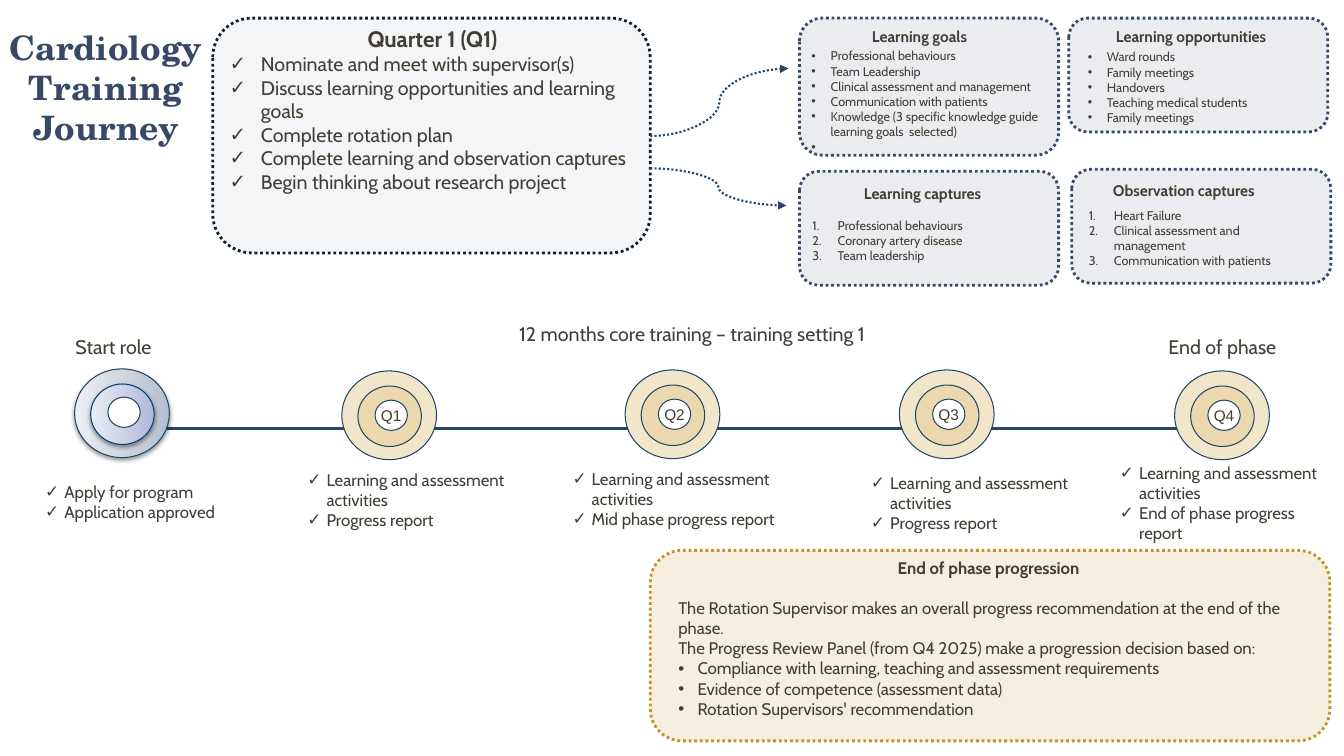
from lxml import etree
from pptx import Presentation
from pptx import util as u
from pptx.dml.color import RGBColor
from pptx.enum import dml, shapes, text
from pptx.oxml import ns

PX = 9144
INK = RGBColor(0x43, 0x3E, 0x35)
NAVY = RGBColor(0x38, 0x49, 0x65)
TITLE = RGBColor(0x38, 0x49, 0x67)
NIGHT = RGBColor(0x12, 0x20, 0x2C)
RAIL = RGBColor(0x27, 0x46, 0x63)
RIM = RGBColor(0x20, 0x46, 0x66)
BLUE = RGBColor(0x00, 0x3C, 0x76)
GOLD = RGBColor(0xC5, 0x93, 0x2B)
SAND = RGBColor(0xF2, 0xE6, 0xCA)
AMBER = RGBColor(0xD3, 0xA4, 0x40)
WHITE = RGBColor(0xFF, 0xFF, 0xFF)
MIST = RGBColor(0xEC, 0xEE, 0xF2)
STEEL = RGBColor(0xB6, 0xBF, 0xCE)
PALE = RGBColor(0xEA, 0xEC, 0xF5)
LILAC = RGBColor(0xAF, 0xB8, 0xD9)
OVAL = shapes.MSO_SHAPE.OVAL
ROUND = shapes.MSO_SHAPE.ROUNDED_RECTANGLE

deck = Presentation()
deck.slide_width, deck.slide_height = 1333 * PX, 750 * PX
slide = deck.slides.add_slide(deck.slide_layouts[6])


def draw(kind, at, fill, line, alpha=100):
    form = slide.shapes.add_shape(kind, *[n * PX for n in at])
    form.shadow.inherit = False
    form.fill.solid()
    form.fill.fore_color.rgb = fill
    if alpha < 100:
        tint = form._element.spPr.find(ns.qn("a:solidFill"))[0]
        etree.SubElement(tint, ns.qn("a:alpha"), val=str(alpha * 1000))
    form.line.color.rgb = line
    form.line.width = u.Pt(0.75)
    if kind == ROUND:
        form.line.width = u.Pt(2)
        form.line.dash_style = dml.MSO_LINE.ROUND_DOT
    return form


def write(at, lines, size, mark=None, dent=19, start=0, bold=False, face="Cabin", wrap=True):
    box = slide.shapes.add_textbox(*[n * PX for n in at])
    frame = box.text_frame
    frame.word_wrap = wrap
    frame.auto_size = text.MSO_AUTO_SIZE.SHAPE_TO_FIT_TEXT
    frame.text = "\n".join(lines)
    for i, para in enumerate(frame.paragraphs):
        if mark and i >= start:
            props = para._p.get_or_add_pPr()
            props.set("marL", str(dent * PX))
            props.set("indent", str(-dent * PX))
            if mark == "1.":
                etree.SubElement(props, ns.qn("a:buAutoNum"), type="arabicPeriod")
            else:
                etree.SubElement(props, ns.qn("a:buFont"), typeface="Arial")
                etree.SubElement(props, ns.qn("a:buChar"), char=mark)
        for run in para.runs:
            run.font.size = u.Pt(size)
            run.font.name = face
            run.font.bold = bold
            run.font.color.rgb = INK
    return frame


title = write((2, 41, 206, 91), ["Cardiology Training Journey"], 24,
              bold=True, face="TeX Gyre Schola")
title.auto_size = text.MSO_AUTO_SIZE.NONE
title.vertical_anchor = text.MSO_ANCHOR.MIDDLE
title.margin_left = title.margin_right = 5 * PX
title.paragraphs[0].alignment = text.PP_ALIGN.CENTER
title.paragraphs[0].runs[0].font.color.rgb = TITLE

rail = slide.shapes.add_connector(
    shapes.MSO_CONNECTOR.STRAIGHT, 90 * PX, 425 * PX, 1234 * PX, 425 * PX)
rail.line.color.rgb = RAIL
rail.line.width = u.Pt(2.25)
etree.SubElement(rail._element.spPr, ns.qn("a:effectLst"))

for at, light, dark, edge in [
    ((74, 366, 94, 88), MIST, STEEL, RIM),
    ((90, 381, 63, 60), PALE, LILAC, BLUE),
]:
    ring = draw(OVAL, at, light, edge)
    ring.fill.gradient()
    ring.fill.gradient_angle = 0
    for stop, shade in zip(ring.fill.gradient_stops, (light, dark)):
        stop.color.rgb = shade
    glow = etree.SubElement(
        ring._element.spPr.find(ns.qn("a:effectLst")), ns.qn("a:outerShdw"),
        blurRad=str(u.Pt(3.1)), dist=str(u.Pt(1.6)), dir="5400000", rotWithShape="0")
    black = etree.SubElement(glow, ns.qn("a:srgbClr"), val="000000")
    etree.SubElement(black, ns.qn("a:alpha"), val="38000")
draw(OVAL, (107, 394, 32, 30), WHITE, RIM)

for name, x, y in [("Q1", 386, 412), ("Q2", 667, 411), ("Q3", 939, 411), ("Q4", 1212, 412)]:
    draw(OVAL, (x - 47, y - 44, 94, 88), SAND, RIM)
    draw(OVAL, (x - 31, y - 29, 63, 60), AMBER, RIM, 20)
    draw(OVAL, (x - 14, y - 15, 32, 30), WHITE, RIM)
    write((x - 18, y - 14, 83, 29), [name], 11, face="Arial")

task = "Learning and assessment activities"
for at, lines in [
    ((35, 473, 216, 50), ["Apply for program", "Application approved"]),
    ((295, 461, 219, 71), [task, "Progress report"]),
    ((558, 460, 262, 71), [task, "Mid phase progress report"]),
    ((854, 464, 219, 71), [task, "Progress report"]),
    ((1101, 454, 232, 91), [task, "End of phase progress report"]),
]:
    write(at, lines, 12, "✓")

for at, words in [
    ((65, 327, 97, 34), "Start role"),
    ((505, 314, 376, 34), "12 months core training – training setting 1"),
    ((1149, 327, 135, 34), "End of phase"),
]:
    write(at, [words], 14, wrap=False)

cards = [
    ((793, 18, 257, 136), (855, 22, 122, 29), "Learning goals", (795, 43, 268, 116), "•", 19,
     ["Professional behaviours", "Team Leadership", "Clinical assessment and management",
      "Communication with patients",
      "Knowledge (3 specific knowledge guide learning goals  selected)", " "]),
    ((1060, 18, 257, 113), (1097, 22, 183, 29), "Learning opportunities",
     (1069, 44, 228, 86), "•", 19,
     ["Ward rounds", "Family meetings", "Handovers", "Teaching medical students",
      "Family meetings"]),
    ((793, 170, 257, 113), (847, 178, 149, 29), "Learning captures",
     (796, 211, 228, 56), "1.", 25,
     ["Professional behaviours", "Coronary artery disease", "Team leadership"]),
    ((1063, 168, 257, 113), (1094, 175, 174, 29), "Observation captures",
     (1070, 201, 228, 71), "1.", 25,
     ["Heart Failure", "Clinical assessment and management", "Communication with patients"]),
]
for at, head, name, area, mark, dent, lines in cards:
    draw(ROUND, at, NAVY, NAVY, 10)
    write(head, [name], 11, bold=True, wrap=False)
    write(area, lines, 9, mark, dent)

draw(ROUND, (211, 18, 434, 233), NAVY, NIGHT, 5)
plan = write((218, 20, 422, 222), [
    "Quarter 1 (Q1)",
    "Nominate and meet with supervisor(s)",
    "Discuss learning opportunities and learning goals",
    "Complete rotation plan",
    "Complete learning and observation captures",
    "Begin thinking about research project",
], 14, "✓", 31, 1)
plan.paragraphs[0].runs[0].font.size = u.Pt(16)

draw(ROUND, (645, 546, 674, 189), GOLD, GOLD, 15)
close = write((663, 548, 635, 172), [
    "End of phase progression",
    "The Rotation Supervisor makes an overall progress recommendation at the end of the phase.",
    "The Progress Review Panel (from Q4 2025) make a progression decision based on:",
    "Compliance with learning, teaching and assessment requirements",
    "Evidence of competence (assessment data)",
    "Rotation Supervisors' recommendation",
], 12, "•", 19, 3)
close.paragraphs[1].space_before = u.Pt(14.4)

for frame in (plan, close):
    frame.paragraphs[0].alignment = text.PP_ALIGN.CENTER
    frame.paragraphs[0].runs[0].font.bold = True

for x, y, right, end in [(645, 135, 782, 68), (645, 167, 780, 204)]:
    curve = slide.shapes.add_connector(
        shapes.MSO_CONNECTOR.CURVE, x * PX, y * PX, right * PX, end * PX)
    curve.line.color.rgb = RAIL
    curve.line.width = u.Pt(1.5)
    curve.line.dash_style = dml.MSO_LINE.ROUND_DOT
    props = curve._element.spPr
    etree.SubElement(props.find(ns.qn("a:ln")), ns.qn("a:tailEnd"), type="triangle")
    etree.SubElement(props, ns.qn("a:effectLst"))

deck.save("out.pptx")
